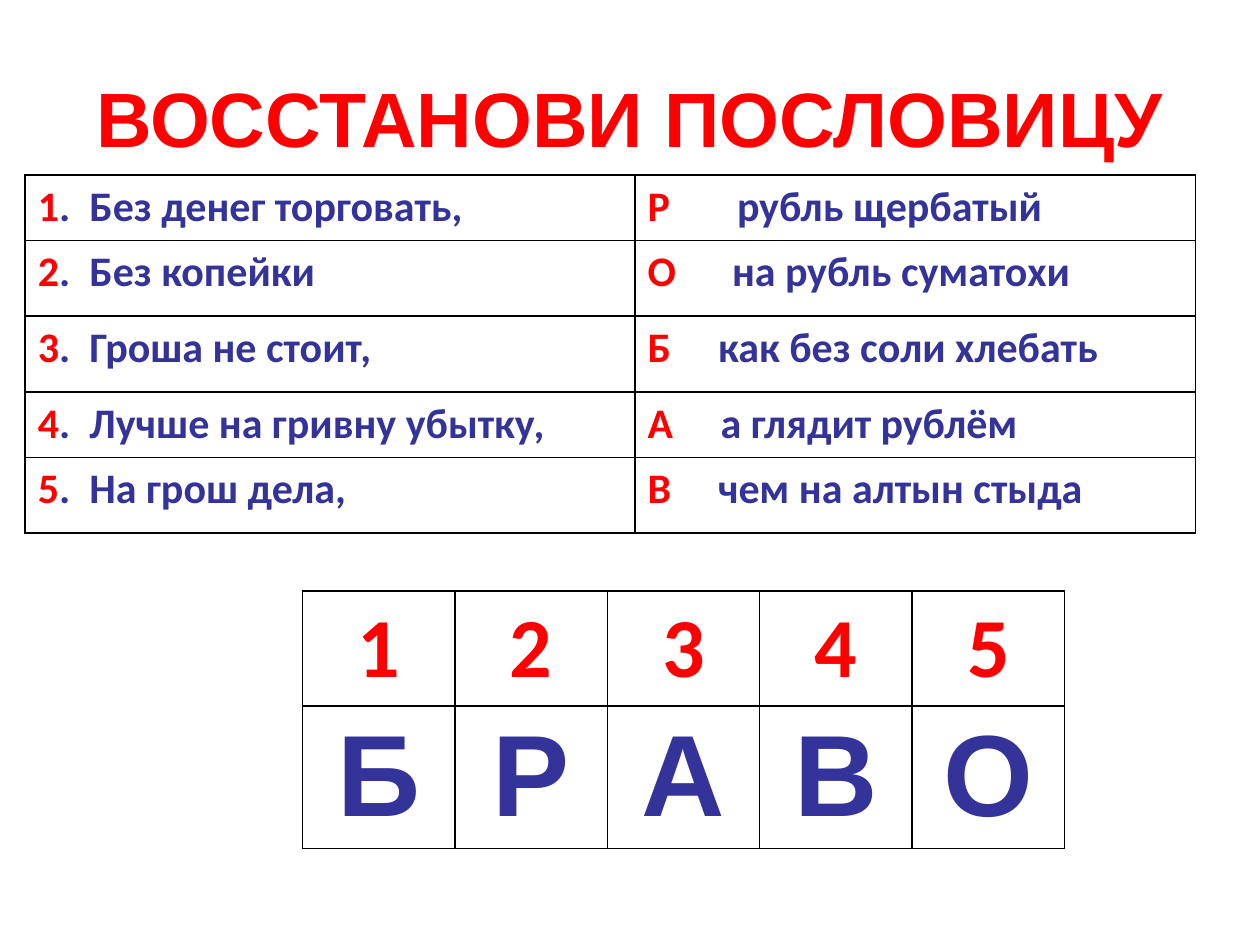
from pptx import Presentation
from pptx.dml.color import RGBColor
from pptx.enum.text import MSO_ANCHOR as Anchor, PP_ALIGN as Align
from pptx.oxml import parse_xml
from pptx.oxml.ns import nsdecls
from pptx.util import Inches, Pt

RED = RGBColor(0xFF, 0x00, 0x00)
BLUE = RGBColor(0x33, 0x33, 0x99)
INK = RGBColor(0x00, 0x00, 0x00)

STARTS = [
    "Без денег торговать,",
    "Без копейки",
    "Гроша не стоит,",
    "Лучше на гривну убытку,",
    "На грош дела,",
]
ENDS = [
    ("Р", "рубль щербатый", 0.71),
    ("О", "на рубль суматохи", 0.67),
    ("Б", "как без соли хлебать", 0.56),
    ("А", "а глядит рублём", 0.58),
    ("В", "чем на алтын стыда", 0.56),
]
WORD = "БРАВО"
GAP = 0.41


def add_run(par, text, size, color, font="Calibri"):
    run = par.add_run()
    run.text = text
    run.font.size = Pt(size)
    run.font.name = font
    run.font.bold = True
    run.font.color.rgb = color


def hang(par, gap):
    props = par._p.get_or_add_pPr()
    props.set("marL", str(Inches(gap)))
    props.set("indent", str(-Inches(gap)))


def edge(cell):
    props = cell._tc.get_or_add_tcPr()
    for at, side in enumerate(("lnL", "lnR", "lnT", "lnB")):
        props.insert(at, parse_xml(
            f'<a:{side} {nsdecls("a")} w="{Pt(1)}"><a:solidFill>'
            f'<a:srgbClr val="{INK}"/></a:solidFill></a:{side}>'))


def add_grid(slide, left, top, cols, rows):
    frame = slide.shapes.add_table(
        len(rows), len(cols), Inches(left), Inches(top),
        Inches(sum(cols)), Inches(sum(rows)))
    grid = frame.table
    grid.first_row = grid.horz_banding = False
    for col, width in zip(grid.columns, cols):
        col.width = Inches(width)
    for row, height in zip(grid.rows, rows):
        row.height = Inches(height)
    for cell in grid.iter_cells():
        cell.fill.background()
        edge(cell)
    return grid


def add_pair(cell, mark, dot, text, gap):
    par = cell.text_frame.paragraphs[0]
    hang(par, gap)
    add_run(par, mark, 24, RED)
    add_run(par, f"{dot}\t{text}", 24, BLUE)


def add_sign(cell, text, size, color, font):
    par = cell.text_frame.paragraphs[0]
    par.alignment = Align.CENTER
    add_run(par, text, size, color, font)


def add_title(slide, text):
    title = slide.shapes.title
    title.left, title.top = Inches(0.5), Inches(0.3)
    title.width, title.height = Inches(9), Inches(1.25)
    frame = title.text_frame
    frame.vertical_anchor = Anchor.MIDDLE
    par = frame.paragraphs[0]
    par.alignment = Align.CENTER
    add_run(par, text, 44, RED, "Arial")


def add_code(slide):
    grid = add_grid(slide, 2.4, 4.69, [1.21] * len(WORD), [0.91, 1.13])
    for col, sign in enumerate(WORD):
        add_sign(grid.cell(0, col), str(col + 1), 48, RED, "Calibri")
        add_sign(grid.cell(1, col), sign, 66, BLUE, "Arial")


def add_halves(slide):
    grid = add_grid(slide, 0.2, 1.39, [4.84, 4.45], [0.52, 0.6, 0.6, 0.52, 0.6])
    for row, (start, (mark, end, gap)) in enumerate(zip(STARTS, ENDS)):
        add_pair(grid.cell(row, 0), str(row + 1), ".", start, GAP)
        add_pair(grid.cell(row, 1), mark, "", end, gap)


def main():
    deck = Presentation()
    deck.slide_width, deck.slide_height = Inches(10), Inches(7.5)
    slide = deck.slides.add_slide(deck.slide_layouts[5])
    add_title(slide, "ВОССТАНОВИ ПОСЛОВИЦУ")
    add_code(slide)
    add_halves(slide)
    deck.save("out.pptx")


if __name__ == "__main__":
    main()
